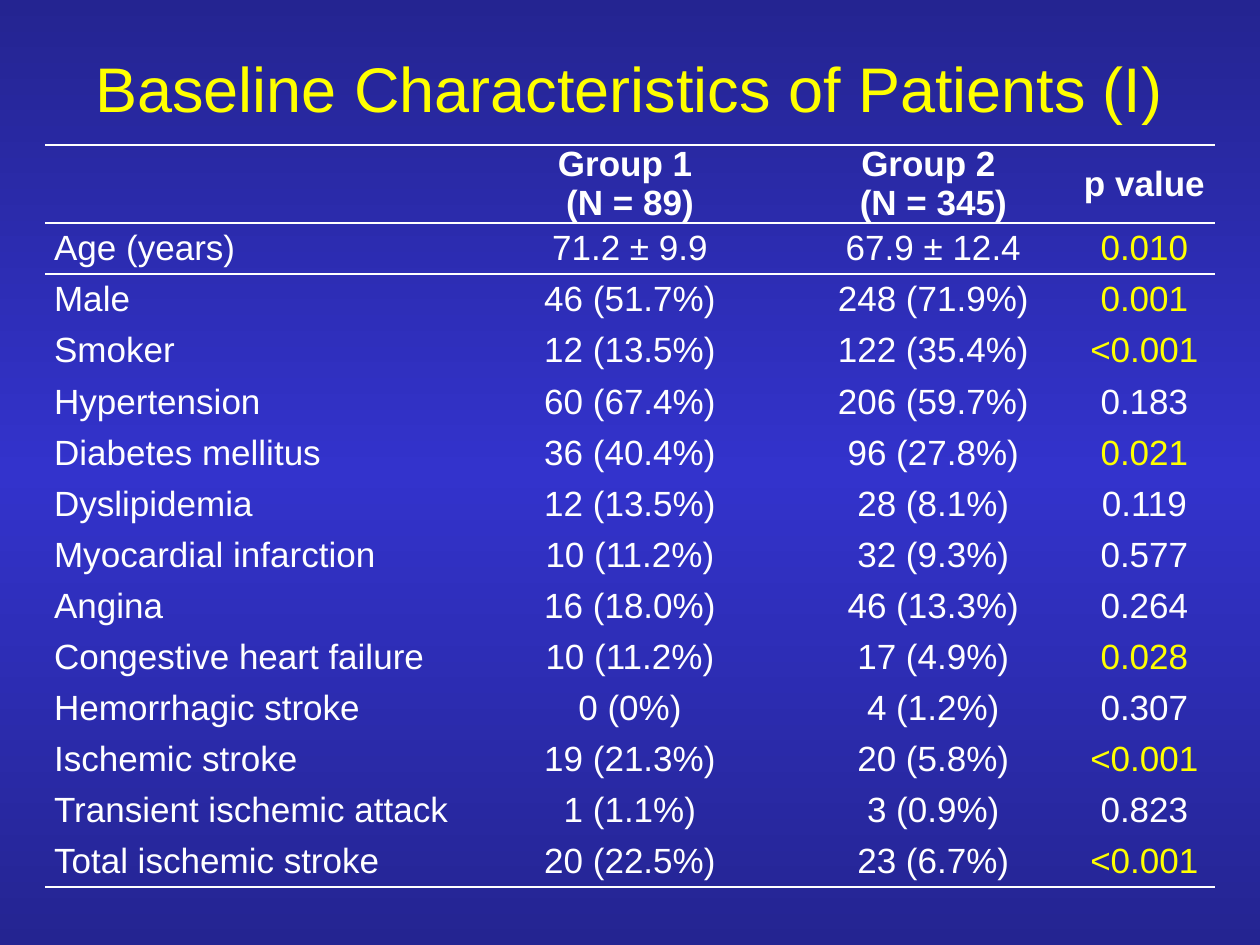
"""Build the slide of baseline patient characteristics in two groups."""
import pptx
import pptx.dml.color
import pptx.enum.text
import pptx.oxml
import pptx.oxml.ns
import pptx.util

Cm = pptx.util.Cm
ALIGN = pptx.enum.text.PP_ALIGN
MIDDLE = pptx.enum.text.MSO_ANCHOR.MIDDLE
WHITE, YELLOW, BLUE = "FFFFFF", "FFFF00", "3333CC"
NAMESPACE = pptx.oxml.ns.nsdecls("a")


def format_text(text_frame, alignment, color, **font_format):
    for paragraph in text_frame.paragraphs:
        paragraph.alignment = alignment
        for run in paragraph.runs:
            run.font.color.rgb = pptx.dml.color.RGBColor.from_string(color)
            for name, value in font_format.items():
                setattr(run.font, name, value)


def add_border(cell, side):
    cell._tc.get_or_add_tcPr().append(pptx.oxml.parse_xml(
        f'<a:{side} {NAMESPACE} w="19050"><a:solidFill><a:srgbClr val="{WHITE}"/>'
        f'</a:solidFill></a:{side}>'))


header = ["", "Group 1 \n(N = 89)", "Group 2 \n(N = 345)", "p value"]
patients = [
    ["Age (years)", "71.2 ± 9.9", "67.9 ± 12.4", "0.010"],
    ["Male", "46 (51.7%)", "248 (71.9%)", "0.001"],
    ["Smoker", "12 (13.5%)", "122 (35.4%)", "<0.001"],
    ["Hypertension", "60 (67.4%)", "206 (59.7%)", "0.183"],
    ["Diabetes mellitus", "36 (40.4%)", "96 (27.8%)", "0.021"],
    ["Dyslipidemia", "12 (13.5%)", "28 (8.1%)", "0.119"],
    ["Myocardial infarction", "10 (11.2%)", "32 (9.3%)", "0.577"],
    ["Angina", "16 (18.0%)", "46 (13.3%)", "0.264"],
    ["Congestive heart failure", "10 (11.2%)", "17 (4.9%)", "0.028"],
    ["Hemorrhagic stroke", "0 (0%)", "4 (1.2%)", "0.307"],
    ["Ischemic stroke", "19 (21.3%)", "20 (5.8%)", "<0.001"],
    ["Transient ischemic attack", "1 (1.1%)", "3 (0.9%)", "0.823"],
    ["Total ischemic stroke", "20 (22.5%)", "23 (6.7%)", "<0.001"],
]
rows = [header] + patients
column_widths = [8.5, 6.58, 5.65, 2.86]
header_height, row_height = 1.57, 1.03

presentation = pptx.Presentation()
presentation.slide_width, presentation.slide_height = Cm(25.4), Cm(19.05)
slide = presentation.slides.add_slide(presentation.slide_layouts[5])

background = slide.background.fill
background.gradient()
background.gradient_angle = 270
stops = slide.element.find(".//" + pptx.oxml.ns.qn("a:gsLst"))
for stop in list(stops):
    stops.remove(stop)
for position, shade in [(0, 46275), (50, 100000), (100, 46275)]:
    stops.append(pptx.oxml.parse_xml(
        f'<a:gs {NAMESPACE} pos="{position * 1000}"><a:srgbClr val="{BLUE}">'
        f'<a:shade val="{shade}"/></a:srgbClr></a:gs>'))

title = slide.shapes.title
title_format = {"left": Cm(1.27), "top": Cm(0.79), "width": Cm(22.83), "height": Cm(1.93)}
for name, value in title_format.items():
    setattr(title, name, value)
title.text_frame.text = "Baseline Characteristics of Patients (I)"
title.text_frame.vertical_anchor = MIDDLE
format_text(title.text_frame, ALIGN.CENTER, YELLOW, name="Arial", size=pptx.util.Pt(36))

table_frame = slide.shapes.add_table(
    len(rows), len(header), Cm(0.91), Cm(2.92), Cm(sum(column_widths)),
    Cm(header_height + row_height * len(patients)))
table = table_frame.table
table.first_row = table.horz_banding = False
style = table._tbl.find(".//" + pptx.oxml.ns.qn("a:tableStyleId"))
style.text = "{2D5ABB26-0587-4C30-8999-92F81FD0307C}"
for column, width in zip(table.columns, column_widths):
    column.width = Cm(width)

cell_format = {"margin_left": Cm(0.18), "margin_right": Cm(0.18), "margin_top": 0,
               "margin_bottom": 0, "vertical_anchor": MIDDLE}
for row_index, values in enumerate(rows):
    is_header = row_index == 0
    table.rows[row_index].height = Cm(header_height if is_header else row_height)
    for column_index, value in enumerate(values):
        cell = table.cell(row_index, column_index)
        cell.text = value
        for name, setting in cell_format.items():
            setattr(cell, name, setting)
        if row_index <= 1:
            add_border(cell, "lnT")
        if is_header or row_index == len(patients):
            add_border(cell, "lnB")
        cell.fill.background()
        is_p_value = column_index == 3 and not is_header
        significant = is_p_value and float(value.lstrip("<")) < 0.05
        format_text(cell.text_frame, ALIGN.CENTER if column_index else ALIGN.JUSTIFY,
                    YELLOW if significant else WHITE,
                    name="Arial", size=pptx.util.Pt(20), bold=is_header)

presentation.save("out.pptx")
